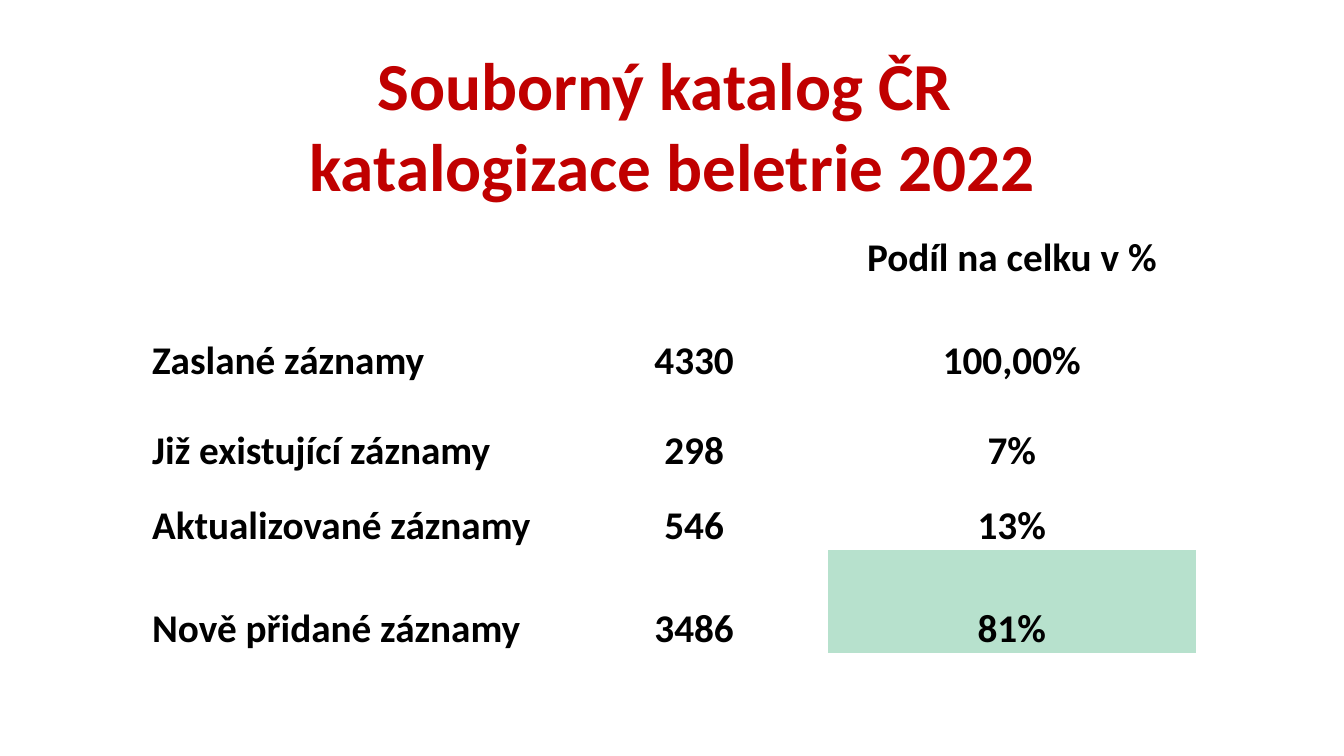
"""Build the slide on fiction cataloguing in the Czech union catalogue, 2022."""
from pptx import Presentation
from pptx import util as u
from pptx.dml.color import RGBColor
from pptx.enum import text
from pptx.oxml.ns import qn

TITLE = "Souborný katalog ČR \vkatalogizace beletrie 2022"
ROWS = [
    ("", "", "Podíl na celku v %"),
    ("Zaslané záznamy", "4330", "100,00%"),
    ("Již existující záznamy", "298", "7%"),
    ("Aktualizované záznamy", "546", "13%"),
    ("Nově přidané záznamy", "3486", "81%"),
    ("", "", ""),
]
COL_WIDTHS = (4.08, 2.65, 3.65)
ROW_HEIGHTS = (0.64, 1.02, 0.89, 0.75, 1.02, 0.75)
HIGHLIGHT = (4, 2)
TITLE_FONT = dict(name="Calibri", size=u.Pt(48), bold=True)
CELL_FONT = dict(name="Calibri", size=u.Pt(28), bold=True)
CELL_FORMAT = dict(
    vertical_anchor=text.MSO_ANCHOR.BOTTOM,
    margin_left=u.Inches(0.03), margin_right=u.Inches(0.03),
    margin_top=0, margin_bottom=0,
)
NO_GRID_STYLE = "{2D5ABB26-0587-4C30-8999-92F81FD0307C}"


def color(value):
    return RGBColor.from_string(value)


def apply(target, values):
    for name, value in values.items():
        setattr(target, name, value)


def write(p, content, font, ink, align):
    p.text = content
    p.alignment = align
    for r in p.runs:
        apply(r.font, font)
        r.font.color.rgb = color(ink)


def add_title(s):
    sp = s.shapes.add_textbox(*map(u.Inches, (0.67, 0.3, 12, 1.86)))
    tf = sp.text_frame
    apply(tf, dict(word_wrap=True, vertical_anchor=text.MSO_ANCHOR.MIDDLE))
    write(tf.paragraphs[0], TITLE, TITLE_FONT, "C00000", text.PP_ALIGN.CENTER)


def add_records(s):
    size = (sum(COL_WIDTHS), sum(ROW_HEIGHTS))
    frame = s.shapes.add_table(len(ROWS), len(COL_WIDTHS),
                               *map(u.Inches, (1.48, 2.16, *size)))
    table = frame.table
    apply(table, dict(first_row=False, horz_banding=False))
    next(frame._element.iter(qn("a:tableStyleId"))).text = NO_GRID_STYLE
    for col, width in zip(table.columns, COL_WIDTHS):
        col.width = u.Inches(width)
    for i, (row, height) in enumerate(zip(table.rows, ROW_HEIGHTS)):
        row.height = u.Inches(height)
        for j, cell in enumerate(row.cells):
            apply(cell, CELL_FORMAT)
            align = text.PP_ALIGN.CENTER if j else text.PP_ALIGN.LEFT
            write(cell.text_frame.paragraphs[0], ROWS[i][j], CELL_FONT, "000000", align)
            if (i, j) == HIGHLIGHT:
                cell.fill.solid()
                cell.fill.fore_color.rgb = color("B7E1CD")
            else:
                cell.fill.background()


def main():
    prs = Presentation()
    apply(prs, dict(slide_width=u.Inches(13.33), slide_height=u.Inches(7.5)))
    s = prs.slides.add_slide(prs.slide_layouts[6])
    add_title(s)
    add_records(s)
    prs.save("out.pptx")


if __name__ == "__main__":
    main()
